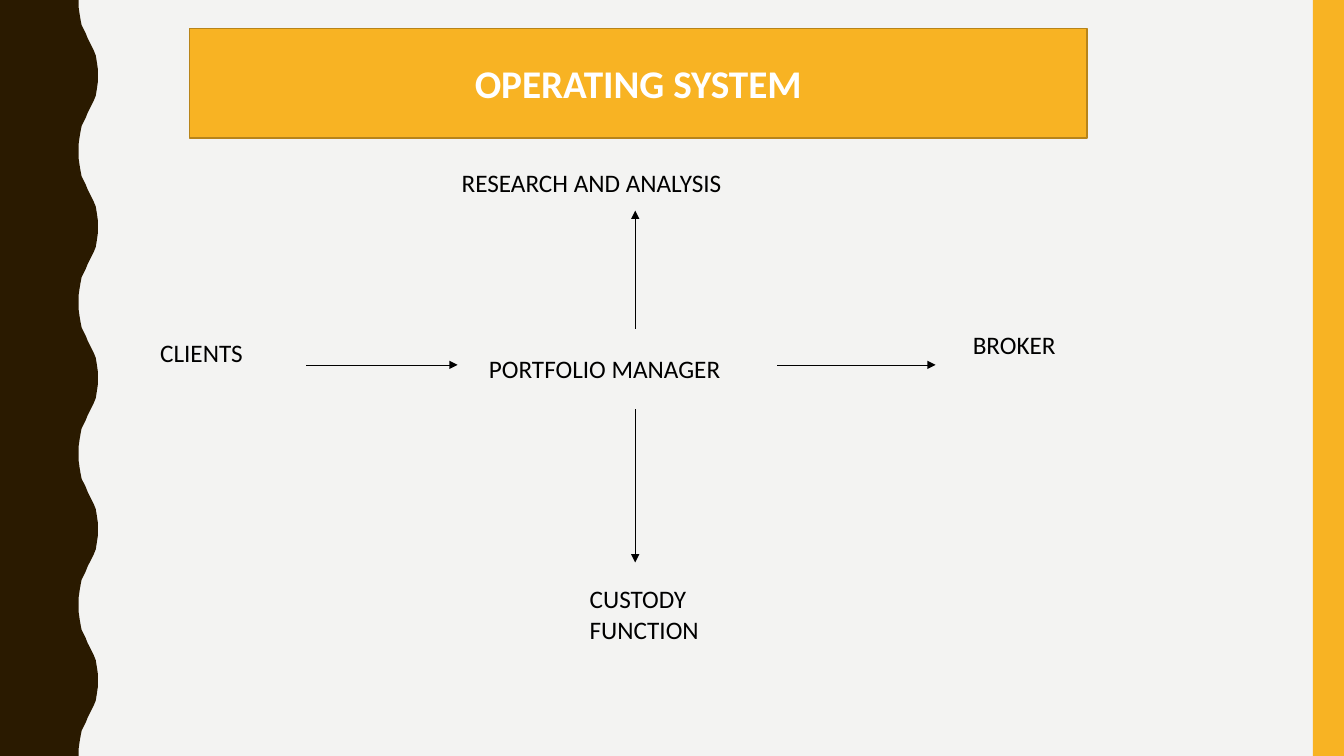
"""Build the operating system slide: a portfolio manager and its four links."""
from typing import Any, NamedTuple

from lxml import etree
from pptx import Presentation
from pptx.dml.color import RGBColor
from pptx.enum.shapes import MSO_CONNECTOR, MSO_SHAPE
from pptx.enum.text import MSO_ANCHOR, MSO_AUTO_SIZE, PP_ALIGN
from pptx.oxml.ns import qn
from pptx.util import Pt

PX = 9144
WIDE, HIGH = 1333, 750

RECT = MSO_SHAPE.RECTANGLE
STRAIGHT = MSO_CONNECTOR.STRAIGHT
MIDDLE = MSO_ANCHOR.MIDDLE
GROW = MSO_AUTO_SIZE.SHAPE_TO_FIT_TEXT
CENTER = PP_ALIGN.CENTER

PAPER = RGBColor(0xF3, 0xF3, 0xF2)
BROWN = RGBColor(0x2A, 0x1A, 0x00)
GOLD = RGBColor(0xF8, 0xB3, 0x23)
BRONZE = RGBColor(0xB7, 0x84, 0x1A)
WHITE = RGBColor(0xFF, 0xFF, 0xFF)
BLACK = RGBColor(0x00, 0x00, 0x00)

TITLE = {"name": "Calibri", "size": Pt(28), "bold": True}
BODY = {"name": "Calibri", "size": Pt(18)}

HALF = 75
RISE = [(78, 0), (78, 7), (79, 14), (80, 20), (81, 25), (83, 29), (85, 33), (87, 38),
        (89, 42), (91, 46), (93, 50), (95, 55), (96, 61), (97, 68), (97, HALF)]


class Box(NamedTuple):
    """Place of an element in px."""
    left: int
    top: int
    width: int
    height: int


class Label(NamedTuple):
    """Text and its box."""
    text: str
    box: Box


class Arrow(NamedTuple):
    """Start and end of an arrow in px."""
    x1: int
    y1: int
    x2: int
    y2: int


SIDE = Box(1302, 0, 31, HIGH)
BANNER = Label("OPERATING SYSTEM", Box(188, 28, 890, 109))
LABELS = [
    Label("PORTFOLIO MANAGER", Box(475, 346, 325, 40)),
    Label("CUSTODY FUNCTION", Box(575, 574, 212, 71)),
    Label("BROKER", Box(955, 322, 238, 40)),
    Label("RESEARCH AND ANALYSIS", Box(448, 161, 378, 40)),
    Label("CLIENTS", Box(149, 330, 171, 40)),
]
ARROWS = [
    Arrow(630, 326, 630, 209),
    Arrow(630, 406, 630, 558),
    Arrow(771, 362, 928, 362),
    Arrow(304, 362, 454, 362),
]


def scale(spot: tuple[int, ...]) -> list[int]:
    """Turn px into EMU."""
    return [value * PX for value in spot]


def paint(shape: Any, fill: RGBColor) -> None:
    """Give a shape a flat fill with no line or shadow."""
    shape.shadow.inherit = False
    shape.fill.solid()
    shape.fill.fore_color.rgb = fill
    shape.line.fill.background()


def write(frame: Any, text: str, style: dict[str, Any], color: RGBColor) -> None:
    """Put styled text in a frame."""
    frame.word_wrap = True
    run = frame.paragraphs[0].add_run()
    run.text = text
    for key, value in style.items():
        setattr(run.font, key, value)
    run.font.color.rgb = color


def draw_wave(shapes: Any) -> None:
    """Draw the wavy band on the left edge."""
    edge = [RISE[0]]
    for turn in range(HIGH // HALF):
        top = turn * HALF
        if turn % 2:
            part = [(x, top + HALF - y) for x, y in reversed(RISE)]
        else:
            part = [(x, top + y) for x, y in RISE]
        edge += part[1:]
    pen = shapes.build_freeform(0, 0, scale=PX)
    pen.add_line_segments([*edge, (0, HIGH)], close=True)
    paint(pen.convert_to_shape(), BROWN)


def draw_rect(shapes: Any, box: Box) -> Any:
    """Draw a gold rectangle."""
    shape = shapes.add_shape(RECT, *scale(box))
    paint(shape, GOLD)
    return shape


def draw_banner(shapes: Any, label: Label) -> None:
    """Draw the title banner."""
    shape = draw_rect(shapes, label.box)
    shape.line.color.rgb = BRONZE
    shape.line.width = Pt(1)
    frame = shape.text_frame
    frame.vertical_anchor = MIDDLE
    write(frame, label.text, TITLE, WHITE)
    frame.paragraphs[0].alignment = CENTER


def draw_label(shapes: Any, label: Label) -> None:
    """Draw a plain text label."""
    frame = shapes.add_textbox(*scale(label.box)).text_frame
    write(frame, label.text, BODY, BLACK)
    frame.auto_size = GROW


def draw_arrow(shapes: Any, arrow: Arrow) -> None:
    """Draw a thin arrow with a triangle at its end."""
    link = shapes.add_connector(STRAIGHT, *scale(arrow))
    link.line.color.rgb = BLACK
    link.line.width = Pt(0.5)
    props = link.element.spPr
    etree.SubElement(props.find(qn("a:ln")), qn("a:tailEnd"), type="triangle")
    etree.SubElement(props, qn("a:effectLst"))


def main() -> None:
    """Build and save the slide."""
    deck = Presentation()
    deck.slide_width, deck.slide_height = scale((WIDE, HIGH))
    slide = deck.slides.add_slide(deck.slide_layouts[6])
    slide.background.fill.solid()
    slide.background.fill.fore_color.rgb = PAPER
    shapes = slide.shapes
    draw_wave(shapes)
    draw_rect(shapes, SIDE)
    draw_banner(shapes, BANNER)
    for arrow in ARROWS:
        draw_arrow(shapes, arrow)
    for label in LABELS:
        draw_label(shapes, label)
    deck.save("out.pptx")


if __name__ == "__main__":
    main()
